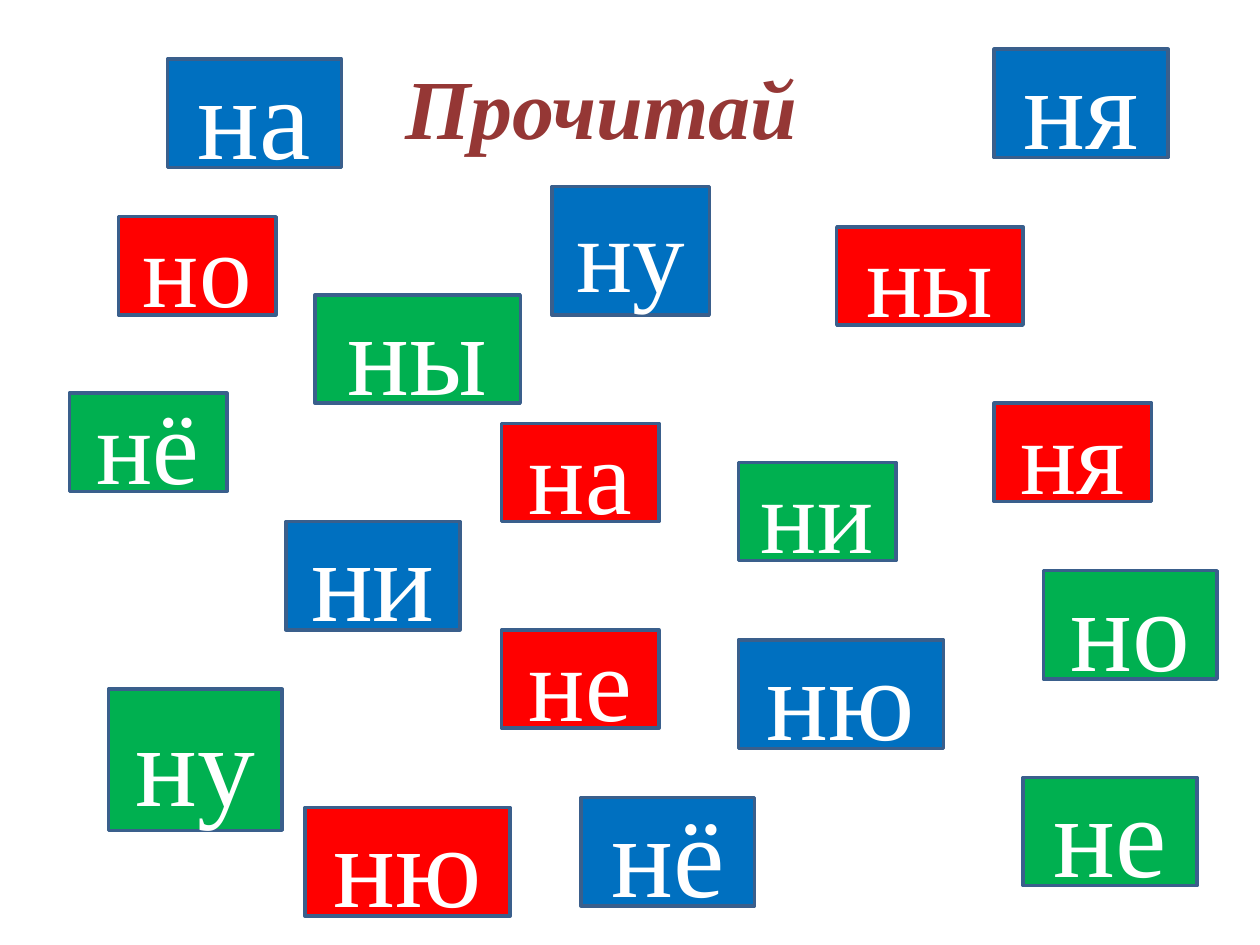
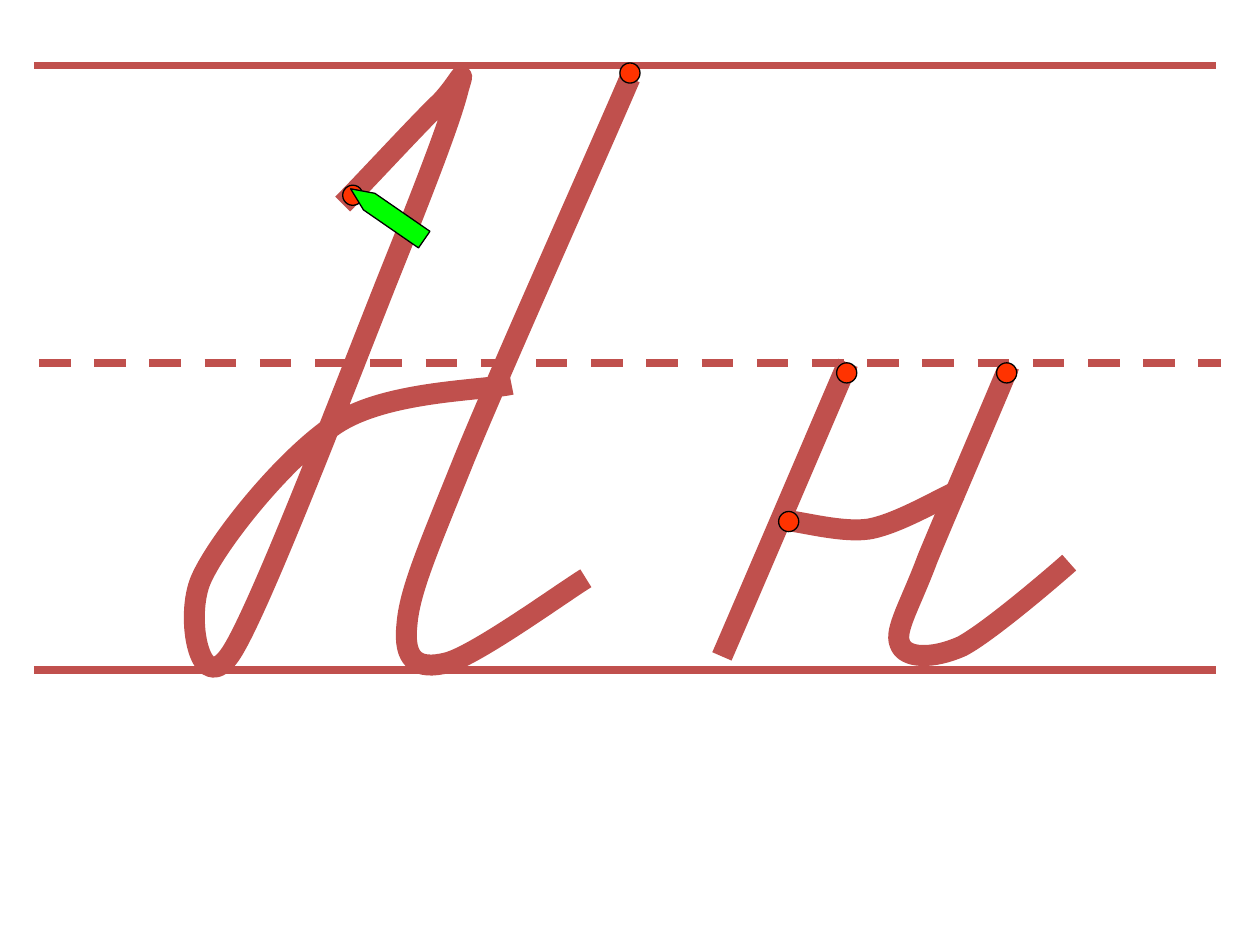
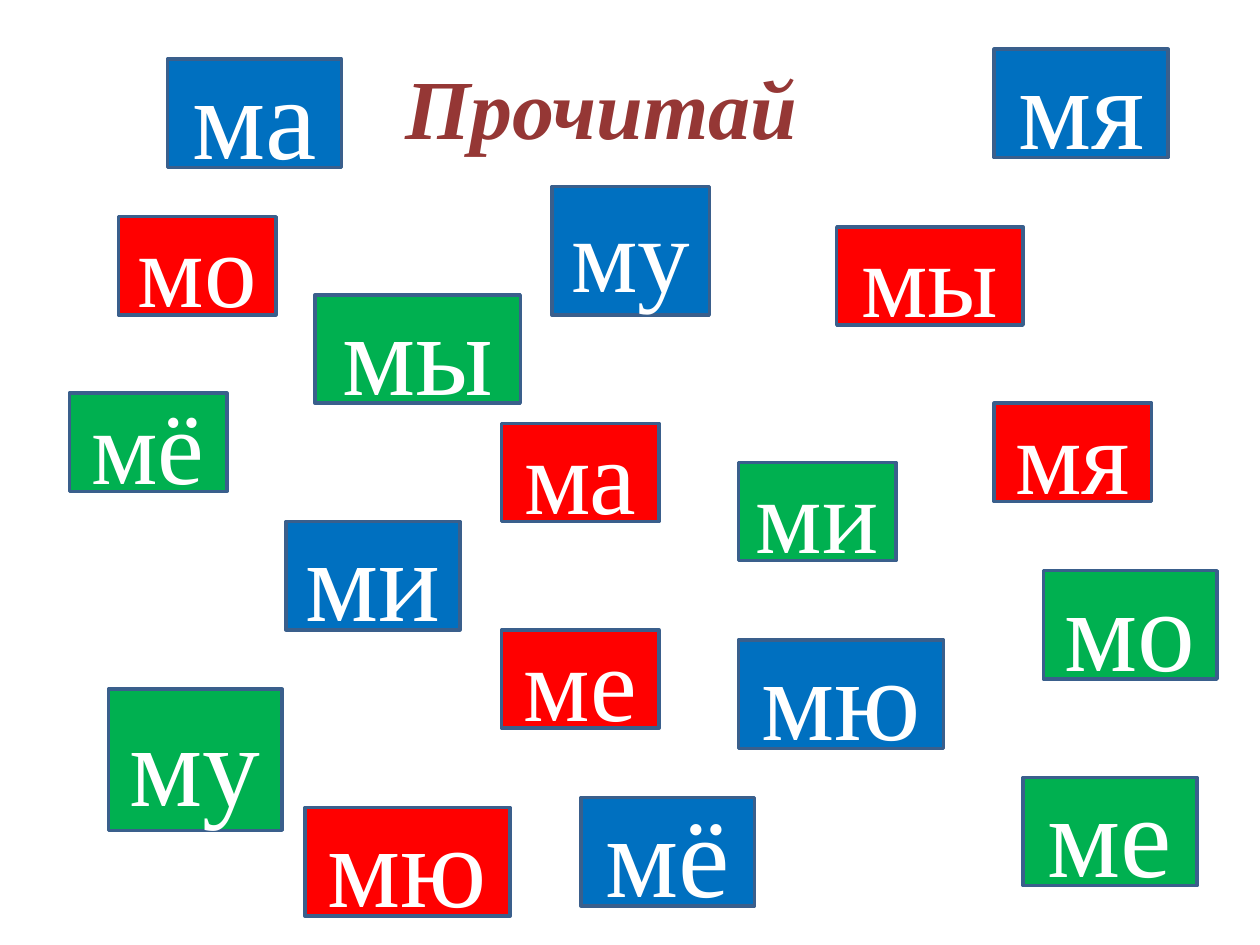
import pptx
import pptx.util
import pptx.dml.color
import pptx.enum.dml
import pptx.enum.shapes
import pptx.enum.text
import pptx.oxml
import pptx.oxml.ns
from dataclasses import dataclass

Inches = pptx.util.Inches
Pt = pptx.util.Pt
RGB = pptx.dml.color.RGBColor.from_string
MSO_SHAPE = pptx.enum.shapes.MSO_SHAPE
PP_ALIGN = pptx.enum.text.PP_ALIGN
MSO_ANCHOR = pptx.enum.text.MSO_ANCHOR
qn = pptx.oxml.ns.qn


@dataclass(frozen=True)
class Theme:
    font: str = "Times New Roman"
    title: str = "953735"
    title_size: int = 48
    text: str = "FFFFFF"
    red: str = "FF0000"
    green: str = "00B050"
    blue: str = "0070C0"
    border: str = "3A5F8C"
    ink: str = "C0504D"
    dot: str = "FF3300"
    pen: str = "00FF00"
    outline: str = "000000"


theme = Theme()


def add_shape(shapes, kind, box, fill, line, width):
    sp = shapes.add_shape(kind, *map(Inches, box))
    sp.shadow.inherit = False
    sp.fill.solid()
    sp.fill.fore_color.rgb = RGB(fill)
    sp.line.color.rgb = RGB(line)
    sp.line.width = Pt(width)
    return sp


def add_stroke(shapes, points):
    start, *rest = [(Inches(x), Inches(y)) for x, y in points]
    fb = shapes.build_freeform(*start)
    fb.add_line_segments(rest, close=False)
    sp = fb.convert_to_shape()
    sp.shadow.inherit = False
    sp.fill.background()
    sp.line.color.rgb = RGB(theme.ink)
    sp.line.width = Pt(12)
    segments = list(sp._element.iter(qn("a:lnTo")))
    for i in range(0, len(segments), 3):
        curve = pptx.oxml.parse_xml(f"<a:cubicBezTo {pptx.oxml.ns.nsdecls('a')}/>")
        segments[i].addprevious(curve)
        for segment in segments[i:i + 3]:
            curve.append(segment[0])
            segment.getparent().remove(segment)
    return sp


prs = pptx.Presentation()
prs.slide_width = Inches(10)
prs.slide_height = Inches(7.5)
title_only, blank = prs.slide_layouts[5], prs.slide_layouts[6]
reading_n = prs.slides.add_slide(title_only)
writing = prs.slides.add_slide(blank)
reading_m = prs.slides.add_slide(title_only)

card_sizes = {
    60: {"width": 1.25, "wide": 1.48, "height": 0.78, "tall": 1.02},
    66: {"width": 1.38, "wide": 1.63, "height": 0.86, "tall": 1.12},
}
cards = [
    ("о", 0.94, 1.72, theme.red, 60),
    ("я", 7.89, 3.2, theme.red, 60),
    ("а", 3.98, 3.36, theme.red, 60),
    ("ю", 5.86, 5.08, theme.blue, 66),
    ("ё", 0.55, 3.12, theme.green, 60),
    ("е", 3.98, 5, theme.red, 60),
    ("и", 5.86, 3.67, theme.green, 60),
    ("у", 4.38, 1.48, theme.blue, 60),
    ("ы", 6.64, 1.8, theme.red, 60),
    ("о", 8.28, 4.53, theme.green, 66),
    ("я", 7.89, 0.39, theme.blue, 66),
    ("а", 1.33, 0.47, theme.blue, 66),
    ("ё", 4.61, 6.33, theme.blue, 66),
    ("е", 8.12, 6.17, theme.green, 66),
    ("и", 2.27, 4.14, theme.blue, 66),
    ("у", 0.86, 5.47, theme.green, 66),
    ("ы", 2.5, 2.34, theme.green, 66),
    ("ю", 2.42, 6.41, theme.red, 66),
]

for s, consonant in ((reading_n, "н"), (reading_m, "м")):
    title = s.shapes.title
    title.left, title.top, title.width, title.height = map(Inches, (3.12, 0.39, 3.44, 0.91))
    tf = title.text_frame
    tf.text = "Прочитай"
    tf.word_wrap = True
    tf.auto_size = pptx.enum.text.MSO_AUTO_SIZE.SHAPE_TO_FIT_TEXT
    tf.vertical_anchor = MSO_ANCHOR.TOP
    p = tf.paragraphs[0]
    p.alignment = PP_ALIGN.LEFT
    p.font.name = theme.font
    p.font.size = Pt(theme.title_size)
    p.font.bold = p.font.italic = True
    p.font.color.rgb = RGB(theme.title)

    for vowel, x, y, fill, size in cards:
        dims = card_sizes[size]
        width = dims["wide" if vowel in "ыю" else "width"]
        height = dims["tall" if vowel == "у" else "height"]
        sp = add_shape(s.shapes, MSO_SHAPE.RECTANGLE, (x, y, width, height),
                       fill, theme.border, 2)
        tf = sp.text_frame
        tf.text = consonant + vowel
        tf.word_wrap = True
        tf.vertical_anchor = MSO_ANCHOR.MIDDLE
        p = tf.paragraphs[0]
        p.alignment = PP_ALIGN.CENTER
        p.font.name = theme.font
        p.font.size = Pt(size)
        p.font.color.rgb = RGB(theme.text)

ruling = writing.shapes.add_group_shape()
for x, y, dashed in ((0.27, 0.52, False), (0.31, 2.88, True), (0.27, 5.32, False)):
    line = ruling.shapes.add_connector(pptx.enum.shapes.MSO_CONNECTOR.STRAIGHT,
                                       Inches(x), Inches(y), Inches(x + 9.38), Inches(y))
    line.line.color.rgb = RGB(theme.ink)
    line.line.width = Pt(4.5)
    if dashed:
        line.line.dash_style = pptx.enum.dml.MSO_LINE.DASH
    line._element.spPr.append(
        pptx.oxml.parse_xml(f"<a:effectLst {pptx.oxml.ns.nsdecls('a')}/>"))

capital_loop = [
    (4.06, 3.05), (3.83, 3.1), (3.1, 3.1), (2.69, 3.35),
    (2.28, 3.61), (1.74, 4.28), (1.6, 4.59),
    (1.46, 4.89), (1.59, 5.59), (1.85, 5.16),
    (2.11, 4.73), (2.86, 2.75), (3.16, 2.01),
    (3.46, 1.26), (3.59, 0.9), (3.64, 0.7),
    (3.7, 0.5), (3.65, 0.65), (3.5, 0.81),
    (3.34, 0.96), (2.89, 1.45), (2.72, 1.62),
]
capital_stem = [
    (4.65, 4.59), (4.47, 4.7), (3.78, 5.2), (3.55, 5.26),
    (3.31, 5.32), (3.2, 5.24), (3.23, 4.96),
    (3.25, 4.69), (3.4, 4.35), (3.69, 3.63),
    (3.99, 2.9), (4.73, 1.25), (5, 0.62),
]
small_stem = [(5.73, 5.21), (5.9, 4.82), (6.52, 3.37), (6.73, 2.88)]
small_hook = [
    (8.46, 4.51), (8.32, 4.62), (7.79, 5.02), (7.57, 5.12),
    (7.33, 5.21), (7.11, 5.19), (7.08, 5.07),
    (7.04, 4.96), (7.18, 4.77), (7.34, 4.41),
    (7.51, 4.06), (7.93, 3.23), (8.08, 2.92),
]
small_bar = [
    (6.21, 4.13), (6.33, 4.13), (6.66, 4.23), (6.89, 4.2),
    (7.13, 4.16), (7.47, 3.95), (7.62, 3.89),
]
letters = [
    ([(capital_loop, 0), (capital_stem, 0)], [(2.72, 1.47), (4.92, 0.5)]),
    ([(small_stem, 0), (small_hook, 356.5), (small_bar, 0)],
     [(6.64, 2.88), (7.91, 2.88), (6.18, 4.06)]),
]
for strokes, dots in letters:
    letter = writing.shapes.add_group_shape()
    for points, angle in strokes:
        add_stroke(letter.shapes, points).rotation = angle
    for x, y in dots:
        add_shape(letter.shapes, MSO_SHAPE.FLOWCHART_CONNECTOR, (x, y, 0.16, 0.16),
                  theme.dot, theme.outline, 0.75)

pen = add_shape(writing.shapes, MSO_SHAPE.PENTAGON, (2.72, 1.62, 0.71, 0.16),
                theme.pen, theme.outline, 0.75)
pen.adjustments[0] = 1.12
pen.rotation = 214.6

prs.save("out.pptx")
